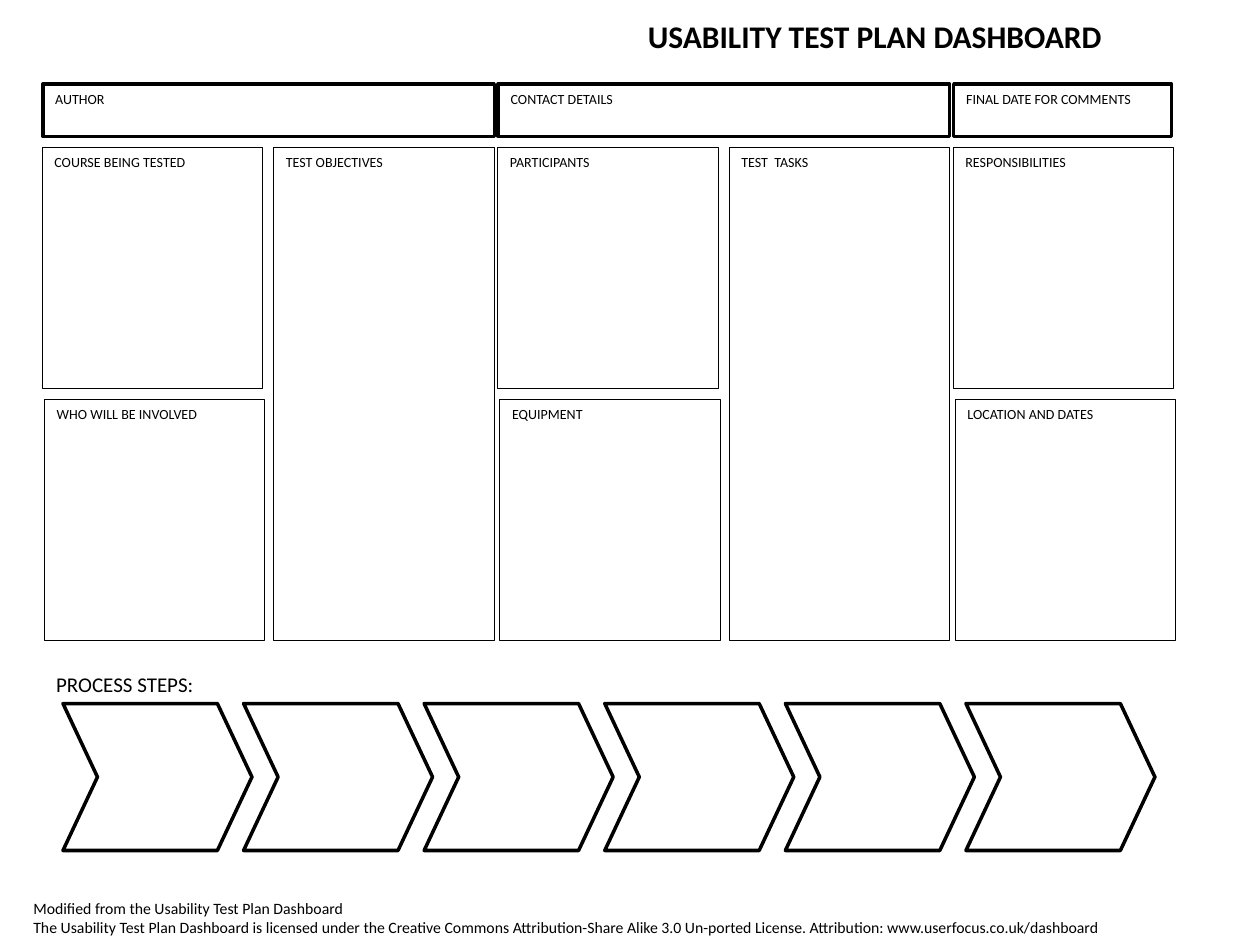
from pptx import Presentation
from pptx.dml.color import RGBColor
from pptx.enum.shapes import MSO_SHAPE
from pptx.enum.text import MSO_ANCHOR, MSO_AUTO_SIZE, PP_ALIGN
from pptx.util import Pt

FONT = "Calibri"
BLACK = "000000"
THIN, THICK = 0.25, 2

LEFT, GROUP_PITCH, BOX_W = 24, 260.25, 126
TALL_SHIFT, LOWER_SHIFT, HEADER_SHIFT = 132.25, 1.25, 0.5
HEADER_TOP, HEADER_H = 48, 30
UPPER_TOP, LOWER_TOP, BOX_H, TALL_H = 84, 228, 138, 282
STEPS, STEP_LEFT, STEP_PITCH = 6, 36, 103.2

HEADERS = [("AUTHOR", 258), ("CONTACT DETAILS", 258),
           ("FINAL DATE FOR COMMENTS", 124.5)]
# Each group: upper box, lower box, tall box to their right
GROUPS = [
    ("COURSE BEING TESTED", "WHO WILL BE INVOLVED", "TEST OBJECTIVES"),
    ("PARTICIPANTS", "EQUIPMENT", "TEST  TASKS"),
    ("RESPONSIBILITIES", "LOCATION AND DATES", None),
]
CREDITS = [
    "Modified from the Usability Test Plan Dashboard",
    "The Usability Test Plan Dashboard is licensed under the Creative Commons "
    "Attribution-Share Alike 3.0 Un-ported License. "
    "Attribution: www.userfocus.co.uk/dashboard",
]


def color(value):
    return RGBColor.from_string(value)


def write(tf, *lines, size=8, bold=False, fill=BLACK):
    """Put each line in its own left-aligned paragraph, from the top."""
    tf.word_wrap = True
    tf.auto_size = MSO_AUTO_SIZE.NONE
    tf.vertical_anchor = MSO_ANCHOR.TOP
    for i, line in enumerate(lines):
        p = tf.paragraphs[0] if i == 0 else tf.add_paragraph()
        p.alignment = PP_ALIGN.LEFT
        p.space_before = Pt(0)
        r = p.add_run()
        r.text = line
        r.font.name = FONT
        r.font.size = Pt(size)
        r.font.bold = bold
        r.font.color.rgb = color(fill)


class Dashboard:
    """Holds the line style and the slide being drawn."""

    def __init__(self, s, line=BLACK):
        self.s = s
        self.line = line

    def title(self, text, x, y, w, h):
        sp = self.s.shapes.title
        sp.left, sp.top, sp.width, sp.height = map(Pt, (x, y, w, h))
        write(sp.text_frame, text, size=18, bold=True)

    def text(self, lines, x, y, w, h, size):
        sp = self.s.shapes.add_textbox(*map(Pt, (x, y, w, h)))
        write(sp.text_frame, *lines, size=size)

    def outline(self, kind, x, y, w, h, weight):
        sp = self.s.shapes.add_shape(kind, *map(Pt, (x, y, w, h)))
        sp.shadow.inherit = False
        sp.fill.background()
        sp.line.color.rgb = color(self.line)
        sp.line.width = Pt(weight)
        return sp

    def box(self, label, x, y, w, h, weight=THIN):
        sp = self.outline(MSO_SHAPE.RECTANGLE, x, y, w, h, weight)
        write(sp.text_frame, label)

    def step(self, x, y, w, h):
        sp = self.outline(MSO_SHAPE.CHEVRON, x, y, w, h, THICK)
        sp.adjustments[0] = 0.235


def main():
    prs = Presentation()
    prs.slide_width, prs.slide_height = Pt(720), Pt(540)
    d = Dashboard(prs.slides.add_slide(prs.slide_layouts[5]))

    d.title("USABILITY TEST PLAN DASHBOARD", 363, 6, 336, 29)
    d.text(CREDITS, 12, 510, 654, 29, size=9)

    for i, (upper, lower, tall) in enumerate(GROUPS):
        x = LEFT + i * GROUP_PITCH
        d.box(upper, x, UPPER_TOP, BOX_W, BOX_H)
        d.box(lower, x + LOWER_SHIFT, LOWER_TOP, BOX_W, BOX_H)
        if tall:
            d.box(tall, x + TALL_SHIFT, UPPER_TOP, BOX_W, TALL_H)

    for i, (label, w) in enumerate(HEADERS):
        x = LEFT + HEADER_SHIFT + i * GROUP_PITCH
        d.box(label, x, HEADER_TOP, w, HEADER_H, weight=THICK)

    d.text(["PROCESS STEPS:"], 25, 380, 314, 22, size=12)
    for i in range(STEPS):
        d.step(STEP_LEFT + i * STEP_PITCH, 402, 108, 84)

    prs.save("out.pptx")


if __name__ == "__main__":
    main()
